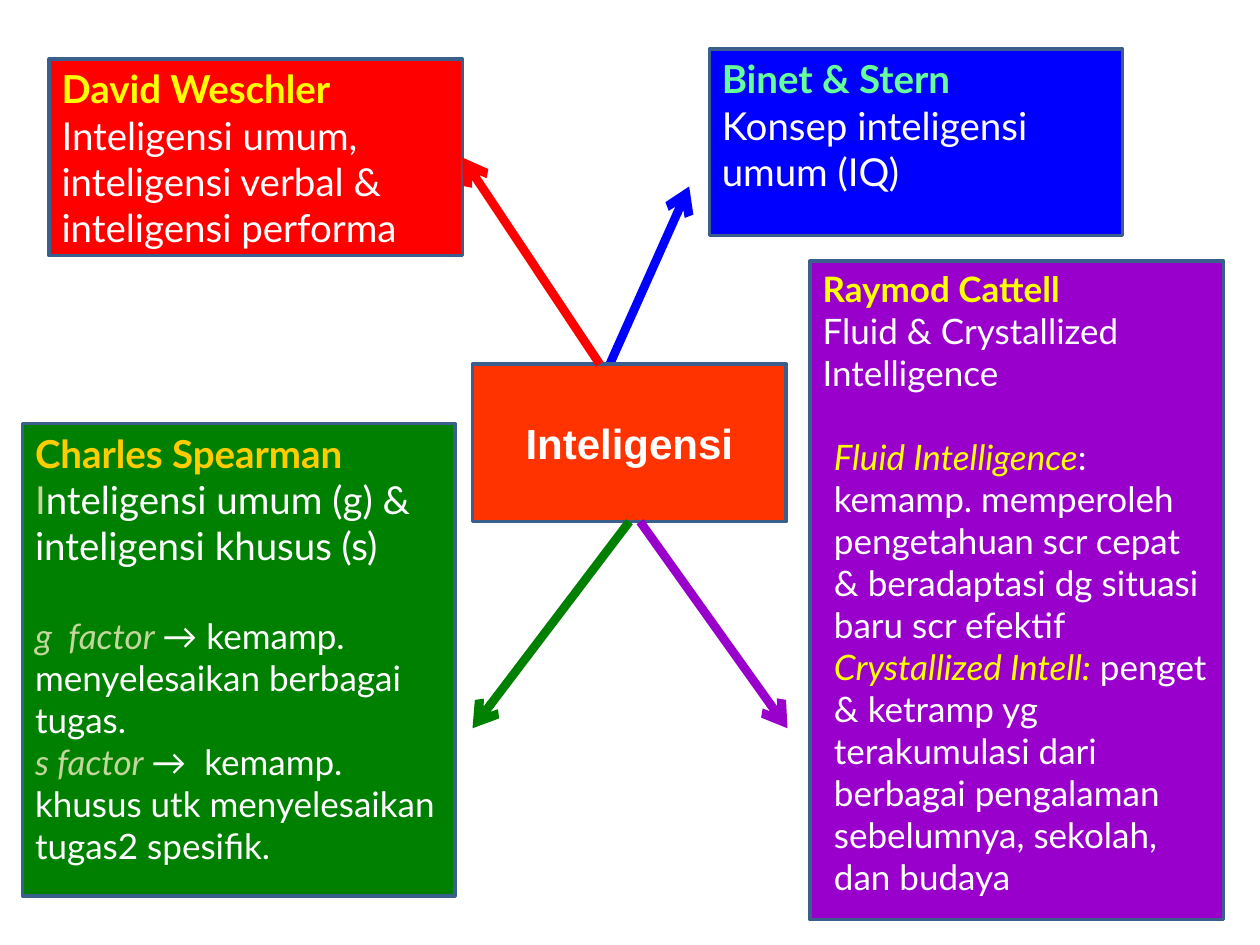
from lxml import etree
from pptx import Presentation
from pptx import util as u
from pptx.dml.color import RGBColor
from pptx.enum import shapes, text
from pptx.oxml import ns

COLORS = {
    "blue": "0000FF",
    "green": "008000",
    "purple": "9900CC",
    "red": "FF0000",
    "orange": "FF3300",
    "border": "3A5F8C",
    "white": "FFFFFF",
    "yellow": "FFFF00",
    "gold": "FFCC00",
    "mint": "66FF99",
    "sage": "C3D69B",
}


def color(name):
    return RGBColor.from_string(COLORS[name])


def add_box(page, left, top, width, height, fill, anchor=text.MSO_ANCHOR.TOP):
    box = page.shapes.add_shape(
        shapes.MSO_SHAPE.RECTANGLE,
        u.Inches(left), u.Inches(top), u.Inches(width), u.Inches(height),
    )
    box.shadow.inherit = False
    box.fill.solid()
    box.fill.fore_color.rgb = color(fill)
    box.line.color.rgb = color("border")
    box.line.width = u.Pt(2)
    box.text_frame.word_wrap = True
    box.text_frame.vertical_anchor = anchor
    return box


def add_para(box, align=text.PP_ALIGN.LEFT, before=0, indent=0):
    frame = box.text_frame
    para = frame.paragraphs[0]
    if para.runs:
        para = frame.add_paragraph()
    para.alignment = align
    para.space_before = u.Pt(before)
    if indent:
        properties = para._p.get_or_add_pPr()
        properties.set("marL", str(u.Inches(indent)))
        properties.set("indent", "0")
    return para


def add_span(para, words, size, fill="white", font="Lato", bold=False, italic=False):
    span = para.add_run()
    span.text = words
    span.font.name = font
    span.font.size = u.Pt(size)
    span.font.bold = bold
    span.font.italic = italic
    span.font.color.rgb = color(fill)


def add_arrow(page, start, end, stroke):
    arrow = page.shapes.add_connector(
        shapes.MSO_CONNECTOR.STRAIGHT, *(u.Inches(value) for value in start + end)
    )
    arrow.line.color.rgb = color(stroke)
    arrow.line.width = u.Pt(5)
    etree.SubElement(arrow.line._get_or_add_ln(), ns.qn("a:tailEnd"), type="arrow")
    etree.SubElement(arrow._element.spPr, ns.qn("a:effectLst"))
    return arrow


def add_theory(page, left, top, width, height, fill, name, name_fill, summary, size):
    box = add_box(page, left, top, width, height, fill)
    add_span(add_para(box), name, size, name_fill, bold=True)
    add_span(add_para(box), summary, size)
    return box


def add_term(box, term, term_fill, meaning, **layout):
    para = add_para(box, **layout)
    add_span(para, term, 20, term_fill, italic=True)
    add_span(para, meaning, 20)


def add_spearman(page):
    box = add_box(page, 0.18, 3.36, 3.43, 3.75, "green")
    para = add_para(box)
    add_span(para, "Charles Spearman ", 22, "gold", bold=True)
    add_span(para, "I", 22, "sage")
    add_span(para, "nteligensi umum (g) & inteligensi khusus (s)", 22)
    add_term(box, "g  factor ", "sage",
             "→ kemamp. menyelesaikan berbagai tugas.", before=26.4)
    add_term(box, "s factor ", "sage",
             "→  kemamp. khusus utk menyelesaikan tugas2 spesifik.")


def add_cattell(page):
    box = add_theory(page, 6.43, 2.07, 3.28, 5.23, "purple", "Raymod Cattell",
                     "yellow", "Fluid & Crystallized Intelligence", 20)
    add_term(box, "Fluid Intelligence", "yellow",
             ": kemamp. memperoleh pengetahuan scr cepat & beradaptasi dg situasi "
             "baru scr efektif", before=24, indent=0.09)
    add_term(box, "Crystallized Intell:", "yellow",
             " penget & ketramp yg terakumulasi dari berbagai pengalaman "
             "sebelumnya, sekolah, dan budaya", indent=0.09)


def add_center(page):
    box = add_box(page, 3.75, 2.89, 2.49, 1.25, "orange", text.MSO_ANCHOR.MIDDLE)
    para = add_para(box, align=text.PP_ALIGN.CENTER)
    add_span(para, "Inteligensi", 24, font="Arial", bold=True)
    return box


def main():
    deck = Presentation()
    deck.slide_width = u.Inches(10)
    deck.slide_height = u.Inches(7.5)
    page = deck.slides.add_slide(deck.slide_layouts[6])

    add_theory(page, 5.63, 0.39, 3.28, 1.48, "blue", "Binet & Stern", "mint",
               "Konsep inteligensi umum (IQ)", 22)
    add_arrow(page, (4.84, 2.89), (5.47, 1.48), "blue")
    add_spearman(page)
    add_cattell(page)
    weschler = add_theory(page, 0.39, 0.47, 3.28, 1.56, "red", "David Weschler", "yellow",
                          "Inteligensi umum, inteligensi verbal & inteligensi performa", 22)
    center = add_center(page)

    to_spearman = add_arrow(page, (5, 4.14), (3.75, 5.78), "green")
    to_spearman.begin_connect(center, 2)
    to_weschler = add_arrow(page, (4.76, 2.89), (3.67, 1.25), "red")
    to_weschler.end_connect(weschler, 3)
    add_arrow(page, (5.08, 4.14), (6.25, 5.78), "purple")

    deck.save("out.pptx")


if __name__ == "__main__":
    main()
